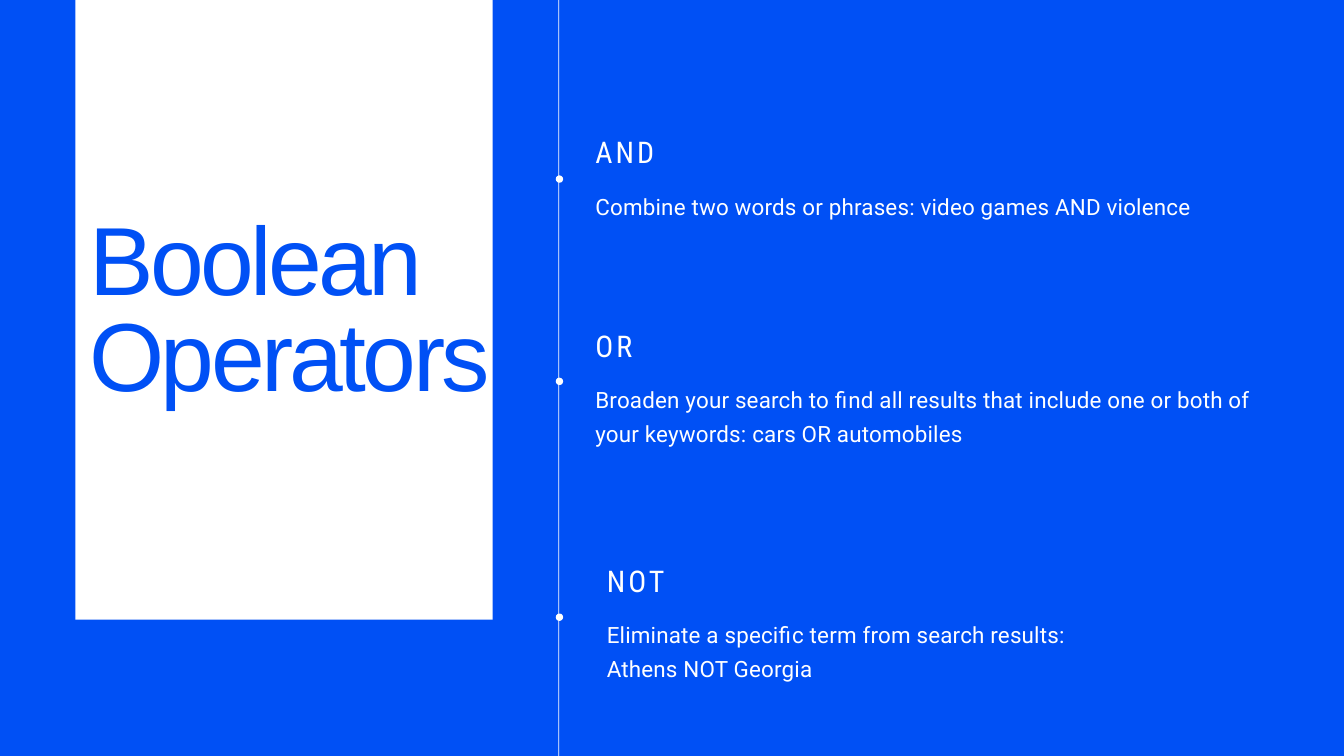
"""Build a slide that explains the three Boolean search operators."""
from dataclasses import dataclass

from pptx import Presentation
from pptx import util as u
from pptx.dml.color import RGBColor
from pptx.enum import shapes


@dataclass(frozen=True)
class Theme:
    blue: RGBColor = RGBColor(0x00, 0x50, 0xF5)
    white: RGBColor = RGBColor(0xFF, 0xFF, 0xFF)
    title: float = 103.6
    heading: float = 32
    body: float = 24


theme = Theme()
prs = Presentation()
prs.slide_width, prs.slide_height = u.Inches(20), u.Inches(11.25)
s = prs.slides.add_slide(prs.slide_layouts[6])
s.background.fill.solid()
s.background.fill.fore_color.rgb = theme.blue


def add_white(kind, *box):
    sp = s.shapes.add_shape(kind, *map(u.Inches, box))
    sp.shadow.inherit = False
    sp.fill.solid()
    sp.fill.fore_color.rgb = theme.white
    sp.line.fill.background()


def add_text(lines, box, font, size, color, leading, tracking):
    tf = s.shapes.add_textbox(*map(u.Inches, box)).text_frame
    tf.word_wrap = True
    tf.margin_left = tf.margin_right = tf.margin_top = tf.margin_bottom = 0
    tf.text = "\n".join(lines)
    for p in tf.paragraphs:
        p.line_spacing = u.Pt(leading)
        p.font.name, p.font.size, p.font.color.rgb = font, u.Pt(size), color
        for r in p.runs:
            r.font._element.set("spc", str(round(tracking * 100)))


add_white(shapes.MSO_SHAPE.RECTANGLE, 8.31, 0, 0.01, 11.25)

operators = [
    ("AND", ["Combine two words or phrases: video games AND violence"], 8.86, 1.95, 2.61),
    ("OR", ["Broaden your search to find all results that include one or both of "
            "your keywords: cars OR automobiles"], 8.86, 4.83, 5.62),
    ("NOT", ["Eliminate a specific term from search results:",
             "Athens NOT Georgia"], 9.03, 8.33, 9.13),
]
for name, description, left, top, dot_top in operators:
    add_white(shapes.MSO_SHAPE.OVAL, 8.27, dot_top, 0.11, 0.11)
    add_text([name], (left, top, 9.84, 0.55), "Roboto Condensed",
             theme.heading, theme.white, 41.6, 3.2)
    add_text(description, (left, top + 0.82, 9.84, 0.97), "Roboto",
             theme.body, theme.white, 36, 0.2)

add_white(shapes.MSO_SHAPE.RECTANGLE, 1.12, 0, 6.21, 9.22)
add_text(["Boolean Operators"], (1.33, 3.24, 7.71, 2.96), "Arial",
         theme.title, theme.blue, theme.title, -3.9)

prs.save("out.pptx")
